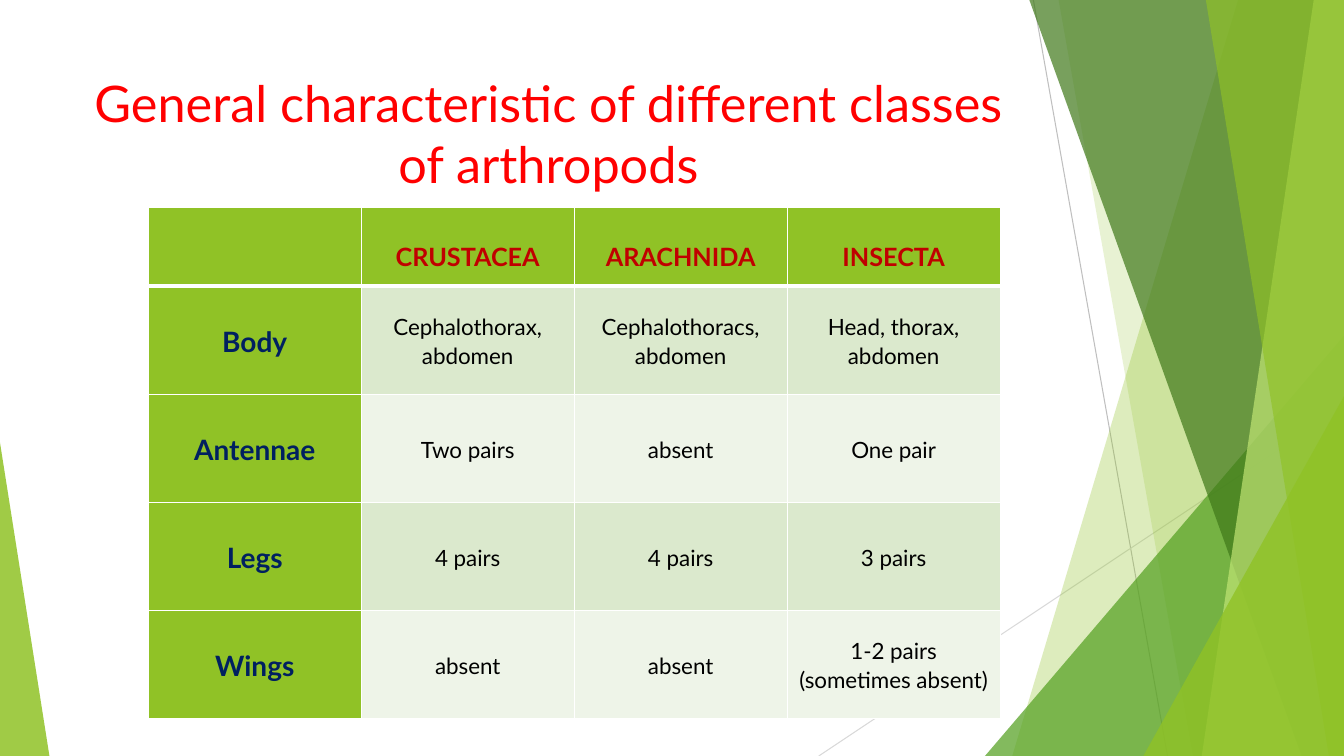
from lxml import etree
from pptx import Presentation
from pptx.dml.color import RGBColor
from pptx.enum.shapes import MSO_CONNECTOR as CONN, MSO_SHAPE as SHAPE
from pptx.enum.text import MSO_ANCHOR as ANCHOR, MSO_AUTO_SIZE as AUTO, PP_ALIGN as ALIGN
from pptx.oxml.ns import qn
from pptx.util import Inches, Pt

GREEN, WHITE = "90C226", "FFFFFF"
BANDS = ["DBE9CD", "EEF4E8"]
CLASSES = ["", "CRUSTACEA", "ARACHNIDA", "INSECTA"]
TRAITS = [
    ["Body", "Cephalothorax, abdomen", "Cephalothoracs, abdomen", "Head, thorax, abdomen"],
    ["Antennae", "Two pairs", "absent", "One pair"],
    ["Legs", "4 pairs", "4 pairs", "3 pairs"],
    ["Wings", "absent", "absent", "1-2 pairs (sometimes absent)"],
]


def rgb(code):
    return RGBColor.from_string(code)


class Deck:
    """Holds the style and the current slide; lengths are percentages of its size."""

    font = "Lato"

    def __init__(self):
        self.prs = Presentation()
        self.prs.slide_width, self.prs.slide_height = Inches(13.33), Inches(7.5)
        self.s = self.prs.slides.add_slide(self.prs.slide_layouts[5])

    def x(self, share):
        return int(self.prs.slide_width * share / 100)

    def y(self, share):
        return int(self.prs.slide_height * share / 100)

    def box(self, left, top, width, height):
        return self.x(left), self.y(top), self.x(width), self.y(height)

    def style(self, p, size, color, bold=False):
        p.alignment = ALIGN.CENTER
        p.font.name, p.font.size, p.font.bold = self.font, Pt(size), bold
        p.font.color.rgb = rgb(color)

    def line(self, x1, y1, x2, y2, color):
        ln = self.s.shapes.add_connector(
            CONN.STRAIGHT, self.x(x1), self.y(y1), self.x(x2), self.y(y2))
        ln.line.color.rgb, ln.line.width = rgb(color), Pt(0.75)
        etree.SubElement(ln._element.spPr, qn("a:effectLst"))

    def paint(self, sp, color, opacity):
        sp.shadow.inherit = False
        sp.line.fill.background()
        sp.fill.solid()
        sp.fill.fore_color.rgb = rgb(color)
        clr = sp._element.spPr.find(qn("a:solidFill"))[0]
        etree.SubElement(clr, qn("a:alpha"), val=str(opacity * 1000))

    def ribbon(self, top_x, bottom_x, color, opacity):
        """Full-height band from a slanted left edge to the slide's right edge."""
        fb = self.s.shapes.build_freeform(self.x(top_x), 0)
        corners = [(100, 0), (100, 100), (bottom_x, 100)]
        fb.add_line_segments([(self.x(x), self.y(y)) for x, y in corners])
        self.paint(fb.convert_to_shape(), color, opacity)

    def wedge(self, left, top, width, apex, color, opacity):
        """Triangle on the bottom edge; apex is 0 for left and 1 for right."""
        sp = self.s.shapes.add_shape(
            SHAPE.ISOSCELES_TRIANGLE, *self.box(left, top, width, 100 - top))
        sp.adjustments[0] = apex
        self.paint(sp, color, opacity)

    def title(self, text, *place):
        sp = self.s.shapes.title
        sp.left, sp.top, sp.width, sp.height = self.box(*place)
        tf = sp.text_frame
        tf.text, tf.word_wrap = text, True
        tf.auto_size, tf.vertical_anchor = AUTO.NONE, ANCHOR.TOP
        self.style(tf.paragraphs[0], 36, "FF0000")
        # Later shapes stay behind the title
        return sp

    def borders(self, cell, **widths):
        for side in "LRTB":
            width = Pt(widths.get(side, 1))
            ln = etree.SubElement(
                cell._tc.get_or_add_tcPr(), qn(f"a:ln{side}"), w=str(width))
            fill = etree.SubElement(ln, qn("a:solidFill"))
            etree.SubElement(fill, qn("a:srgbClr"), val=WHITE)

    def cell(self, cell, text, fill, size, color, bold, **widths):
        self.borders(cell, **widths)
        cell.fill.solid()
        cell.fill.fore_color.rgb = rgb(fill)
        cell.margin_left = cell.margin_right = Inches(0.07)
        cell.margin_top = cell.margin_bottom = 0
        cell.vertical_anchor = ANCHOR.MIDDLE
        cell.text = text
        p = cell.text_frame.paragraphs[0]
        p.line_spacing = 1.07
        self.style(p, size, color, bold)

    def table(self, header, rows, left, top, width, head_height, row_height):
        height = head_height + row_height * len(rows)
        tbl = self.s.shapes.add_table(
            len(rows) + 1, len(header), *self.box(left, top, width, height)).table
        tbl.horz_banding = False
        for i, row in enumerate(tbl.rows):
            row.height = self.y(row_height if i else head_height)
        for j, text in enumerate(header):
            c = tbl.cell(0, j)
            self.cell(c, text, GREEN, 18, "C00000", True, B=3)
            c.vertical_anchor, c.margin_bottom = ANCHOR.BOTTOM, Inches(0.14)
        for i, values in enumerate(rows):
            for j, text in enumerate(values):
                look = (BANDS[i % 2], 16, "000000", False) if j else (GREEN, 20, "002060", True)
                self.cell(tbl.cell(i + 1, j), text, *look, T=1 if i else 3)


def main():
    d = Deck()
    d.line(76.89, 0, 86.87, 100, "BFBFBF")
    d.line(100, 53.73, 60.92, 100, "D9D9D9")
    d.ribbon(92.12, 75.32, GREEN, 30)
    d.ribbon(78.77, 88.75, GREEN, 20)
    d.wedge(73.29, 44.4, 26.71, 1, "54A021", 72)
    d.ribbon(76.59, 96.85, "3F7819", 70)
    d.ribbon(97.75, 89.42, "C0E474", 70)
    d.ribbon(89.72, 98.87, GREEN, 65)
    d.wedge(85.07, 52.4, 14.93, 1, GREEN, 80)
    d.wedge(0, 58.53, 3.68, 0, GREEN, 85)
    d.title("General characteristic of different classes of arthropods",
            5.55, 8.93, 70.52, 19.2)
    d.table(CLASSES, TRAITS, 11.03, 27.47, 63.39, 10.4, 14.3)
    d.prs.save("out.pptx")


if __name__ == "__main__":
    main()
